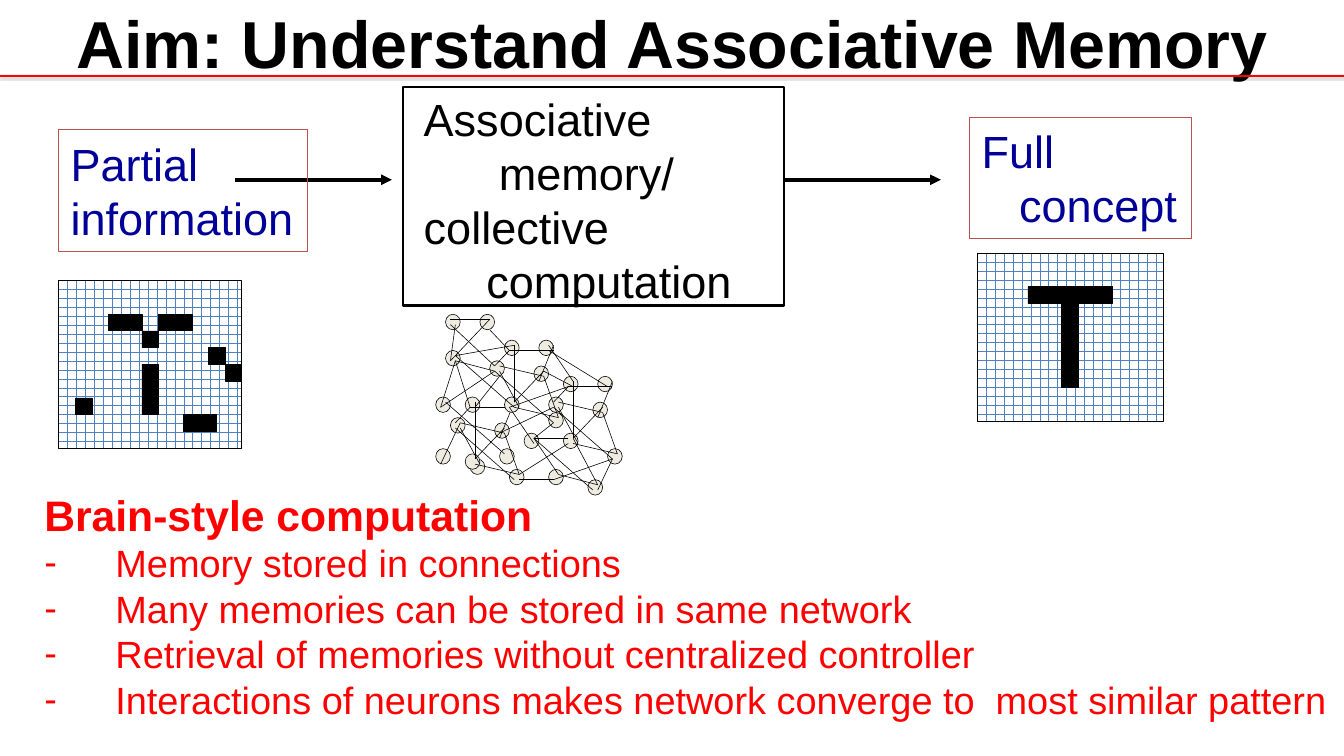
from lxml.etree import SubElement
from pptx import Presentation
from pptx.dml.color import RGBColor
from pptx.enum.dml import MSO_PATTERN
from pptx.enum.shapes import MSO_CONNECTOR, MSO_SHAPE
from pptx.enum.text import MSO_ANCHOR, MSO_AUTO_SIZE, PP_ALIGN
from pptx.oxml.ns import qn
from pptx.util import Inches, Pt

WIDTH, HEIGHT = Inches(23.63), Inches(13.29)
BLACK, WHITE, RED, NAVY = "000000", "FFFFFF", "FF0000", "000099"
BRICK, GRID_BLUE, IVORY = "C0504D", "4F81BD", "EEECE1"
SPACE = 0.22  # inches, one space at the label size

# Pixel panels: (column, row) of each dark cell, 11 columns by 10 rows
PANEL_COLUMNS, PANEL_ROWS = 11, 10
FULL_T = [(col, 2) for col in range(3, 8)] + [(5, row) for row in range(3, 8)]
NOISY_T = [(3, 2), (4, 2), (6, 2), (7, 2), (5, 3), (5, 5), (5, 6), (5, 7),
           (1, 7), (9, 4), (10, 5), (7.5, 8), (8.5, 8)]

# Network: a cluster that recurs, then single neurons and links
NET_LEFT, NET_TOP, NET_WIDTH, NET_HEIGHT = 32.42, 41.57, 13.88, 23.93
NET_COLUMNS, NET_ROWS = 38, 35
CLUSTER_NEURONS = [(0, 0), (6, 5), (0, 11), (-3, 4), (9, 14), (7, 0)]
CLUSTER_LINKS = [(8, 7, 11, 15), (8, 6, 2, 12), (2, 13, 11, 15), (10, 1, 7, 8),
                 (10, 2, 1, 2), (8, 7, -1, 5), (-1, 6, 3, 13), (1, 2, -2, 5),
                 (2, 1, 2, 12), (-2, 6, 10, 16)]
SINGLE_NEURONS = [(7, 28), (23, 30), (31, 32), (2, 0), (2, 7), (13, 26),
                  (9, 0), (18, 23), (0, 16), (0, 26)]
SINGLE_LINKS = [
    (2, 17, 14, 27), (20, 24, 25, 31), (20, 24, 32, 34), (4, 8, 16, 18),
    (11, 1, 3, 9), (4, 2, 3, 9), (23, 7, 35, 14), (5, 21, 1, 29),
    (15, 7, 11, 3), (12, 11, 4, 9), (11, 1, 3, 1), (3, 2, 12, 10),
    (4, 9, 1, 18), (4, 9, 7, 18), (36, 28, 24, 32), (33, 33, 25, 31),
    (15, 18, 20, 25), (27, 24, 20, 24), (27, 25, 17, 31), (24, 18, 13, 23),
    (16, 6, 4, 8), (12, 11, 1, 18), (13, 12, 8, 18), (24, 32, 17, 32),
    (36, 28, 33, 34), (28, 24, 33, 33), (28, 14, 22, 11), (23, 6, 28, 13),
    (27, 14, 15, 18), (24, 21, 20, 24)]


def color(hex_code):
    return RGBColor.from_string(hex_code)


def area(left, top, width, height):
    """Percentages of the slide as lengths."""
    return [int(share * side / 100) for share, side in
            zip((left, top, width, height), (WIDTH, HEIGHT) * 2)]


def add_figure(shapes, kind, box, fill=None, line=BLACK, weight=0.75):
    figure = shapes.add_shape(kind, *area(*box))
    figure.shadow.inherit = False
    if fill:
        figure.fill.solid()
        figure.fill.fore_color.rgb = color(fill)
    else:
        figure.fill.background()
    if line:
        figure.line.color.rgb = color(line)
        figure.line.width = Pt(weight)
    else:
        figure.line.fill.background()
    return figure


def add_line(shapes, ends, line=BLACK, weight=0.75, arrow=False, shadow=False):
    link = shapes.add_connector(MSO_CONNECTOR.STRAIGHT, *area(*ends))
    link.line.color.rgb = color(line)
    link.line.width = Pt(weight)
    outline = link._element.spPr.find(qn("a:ln"))
    if arrow:
        SubElement(outline, qn("a:tailEnd"), type="triangle")
    effects = SubElement(link._element.spPr, qn("a:effectLst"))
    if shadow:
        outer = SubElement(effects, qn("a:outerShdw"), blurRad=str(Pt(3.1)),
                           dist=str(Pt(1.6)), dir="5400000", rotWithShape="0")
        tint = SubElement(outer, qn("a:srgbClr"), val=BLACK)
        SubElement(tint, qn("a:alpha"), val="38000")


def prepare_frame(frame):
    frame.word_wrap = True
    frame.auto_size = MSO_AUTO_SIZE.NONE
    frame.vertical_anchor = MSO_ANCHOR.TOP
    frame.margin_left, frame.margin_right = Inches(0.21), 0
    frame.margin_top = frame.margin_bottom = Inches(0.11)


def format_paragraph(paragraph, size, ink, bold=False, indent=0, hanging=0, bullet=None):
    font = paragraph.font
    font.name, font.size, font.bold = "Arial", Pt(size), bold
    font.color.rgb = color(ink)
    paragraph.alignment = PP_ALIGN.LEFT
    paragraph.line_spacing = Pt(round(size * 1.2, 1))
    paragraph.space_before = paragraph.space_after = Pt(0)
    properties = paragraph._p.get_or_add_pPr()
    properties.set("marL", str(Inches(indent)))
    properties.set("indent", str(Inches(-hanging)))
    mark = SubElement(properties, qn("a:buChar" if bullet else "a:buNone"))
    if bullet:
        mark.set("char", bullet)
    properties.find(qn("a:defRPr")).addprevious(mark)


def add_label(shapes, box, lines, ink, line=None):
    """Box of text; each line comes with its indent in spaces."""
    frame = add_figure(shapes, MSO_SHAPE.RECTANGLE, box, line=line).text_frame
    prepare_frame(frame)
    frame.text = "\n".join(text for text, _ in lines)
    for paragraph, (_, spaces) in zip(frame.paragraphs, lines):
        format_paragraph(paragraph, 57, ink, indent=spaces * SPACE)


def add_pixel_panel(slide, box, cells):
    group = slide.shapes.add_group_shape().shapes
    panel = add_figure(group, MSO_SHAPE.RECTANGLE, box)
    panel.fill.patterned()
    panel.fill.pattern = MSO_PATTERN.DOTTED_GRID
    panel.fill.fore_color.rgb = color(GRID_BLUE)
    panel.fill.back_color.rgb = color(WHITE)
    left, top, width, height = box
    cell_w, cell_h = width / PANEL_COLUMNS, height / PANEL_ROWS
    for col, row in cells:
        cell = (left + col * cell_w, top + row * cell_h, cell_w, cell_h)
        add_figure(group, MSO_SHAPE.RECTANGLE, cell, fill=BLACK)


def add_neurons(group, neurons, links, col=0, row=0):
    """Neurons and links, moved by col and row on the network grid."""
    cell_w, cell_h = NET_WIDTH / NET_COLUMNS, NET_HEIGHT / NET_ROWS

    def place(x, y):
        return NET_LEFT + (col + x) * cell_w, NET_TOP + (row + y) * cell_h

    for neuron in neurons:
        box = (*place(*neuron), 3 * cell_w, 3 * cell_h)
        add_figure(group, MSO_SHAPE.OVAL, box, fill=IVORY)
    for x1, y1, x2, y2 in links:
        add_line(group, (*place(x1, y1), *place(x2, y2)))


def add_network(slide):
    group = slide.shapes.add_group_shape().shapes
    add_neurons(group, CLUSTER_NEURONS, CLUSTER_LINKS, 26, 12)
    add_neurons(group, SINGLE_NEURONS, [])
    add_neurons(group, CLUSTER_NEURONS[:-1], CLUSTER_LINKS, 6, 16)
    add_neurons(group, CLUSTER_NEURONS, CLUSTER_LINKS, 14, 5)
    add_neurons(group, [], SINGLE_LINKS)


def fill_placeholder(holder, box, text):
    holder.left, holder.top, holder.width, holder.height = area(*box)
    prepare_frame(holder.text_frame)
    holder.text_frame.text = text
    return holder.text_frame.paragraphs


def main():
    deck = Presentation()
    deck.slide_width, deck.slide_height = WIDTH, HEIGHT
    slide = deck.slides.add_slide(deck.slide_layouts[1])
    shapes = slide.shapes

    # Title and list
    title, = fill_placeholder(shapes.title, (4.78, -0.6, 91.41, 12.26),
                              "Aim: Understand Associative Memory")
    format_paragraph(title, 84, BLACK, bold=True)
    heading, *points = fill_placeholder(
        slide.placeholders[1], (2.41, 63.81, 97.59, 36.19), "\n".join([
            "Brain-style computation",
            "Memory stored in connections",
            "Many memories can be stored in same network",
            "Retrieval of memories without centralized controller",
            "Interactions of neurons makes network converge to  most similar pattern"]))
    format_paragraph(heading, 54, RED, bold=True)
    for point in points:
        format_paragraph(point, 48, RED, indent=1.25, hanging=1.25, bullet="-")

    # Flow from partial information to full concept
    add_figure(shapes, MSO_SHAPE.RECTANGLE, (30, 11.51, 28.35, 28.89), weight=3)
    add_line(shapes, (17.52, 23.78, 29.16, 23.78), weight=4.5, arrow=True)
    add_label(shapes, (4.36, 17.16, 18.54, 16.03),
              [("Partial", 0), ("information", 0)], NAVY, BRICK)
    add_label(shapes, (30.64, 11.21, 24.97, 30.47),
              [("Associative", 0), ("memory/", 6), ("collective", 0), ("computation", 5)],
              BLACK)
    add_line(shapes, (58.32, 23.78, 70, 23.78), weight=4.5, arrow=True)
    add_label(shapes, (72.15, 15.5, 16.5, 16.03), [("Full", 0), ("concept", 3)], NAVY, BRICK)

    # Patterns and network
    add_pixel_panel(slide, (72.7, 33.48, 13.84, 22.2), FULL_T)
    add_pixel_panel(slide, (4.36, 37.1, 13.63, 22.2), NOISY_T)
    add_network(slide)

    # Rule under the title
    add_line(shapes, (0, 10.08, 100, 10.08), RED, 2, shadow=True)
    deck.save("out.pptx")


if __name__ == "__main__":
    main()
